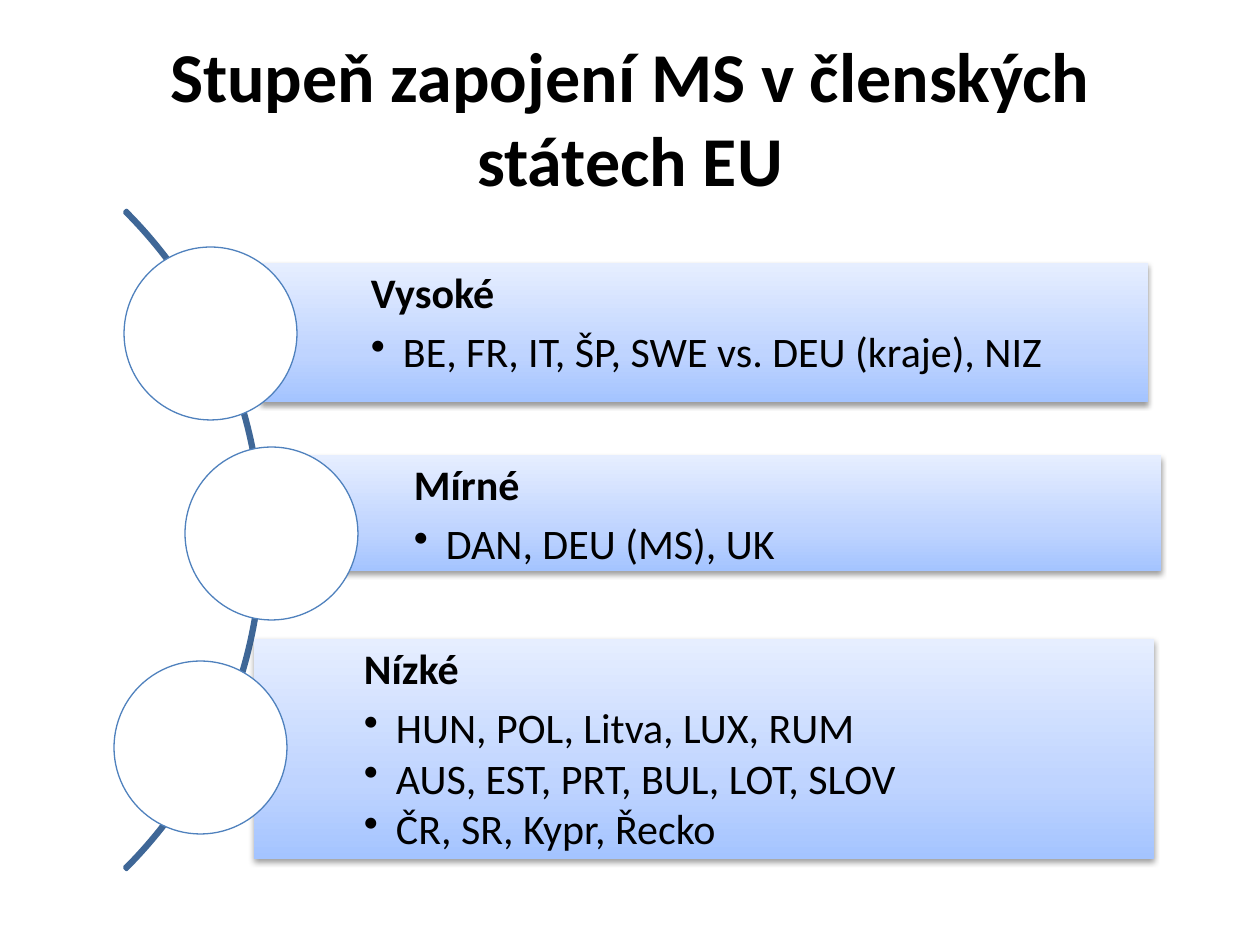
from pptx import Presentation
from pptx.dml.color import RGBColor
from pptx.enum.shapes import MSO_SHAPE
from pptx.enum.text import MSO_ANCHOR, PP_ALIGN
from pptx.oxml import parse_xml
from pptx.oxml.ns import nsdecls
from pptx.util import Pt

ARC, RECT, OVAL = MSO_SHAPE.BLOCK_ARC, MSO_SHAPE.RECTANGLE, MSO_SHAPE.OVAL
TOP, MID = MSO_ANCHOR.TOP, MSO_ANCHOR.MIDDLE
LEFT, CENTER = PP_ALIGN.LEFT, PP_ALIGN.CENTER

TITLE = "Stupeň zapojení MS v členských státech EU"
LEVELS = [
    ("Vysoké", ["BE, FR, IT, ŠP, SWE vs. DEU (kraje), NIZ"],
     (261, 263, 887, 139), (124, 247)),
    ("Mírné", ["DAN, DEU (MS), UK"],
     (304, 455, 857, 116), (185, 447)),
    ("Nízké", ["HUN, POL, Litva, LUX, RUM",
               "AUS, EST, PRT, BUL, LOT, SLOV",
               "ČR, SR, Kypr, Řecko"],
     (254, 639, 900, 220), (114, 661)),
]
STOPS = [(0, "A4C4FF"), (35, "BFD4FF"), (100, "E6EEFF")]
DISC = 173
PAD, INSET, HANG = 9, 110, 32
FONT = "Calibri"


def px(n):
    return round(n * 914400 / 126)


def color(code):
    return RGBColor.from_string(code)


def add(kind, left, top, width, height):
    shape = slide.shapes.add_shape(
        kind, px(left), px(top), px(width), px(height))
    shape.shadow.inherit = False
    return shape


def style(para, size, bold, align):
    para.alignment = align
    for run in para.runs:
        font = run.font
        font.name, font.size, font.bold = FONT, Pt(size), bold
        font.color.rgb = color("000000")


def outline(shape, code, width):
    shape.line.color.rgb = color(code)
    shape.line.width = Pt(width)


def shade(shape):
    shape.line.fill.background()
    props = shape._element.spPr
    stops = "".join(
        f'<a:gs pos="{pos * 1000}"><a:srgbClr val="{code}"/></a:gs>'
        for pos, code in STOPS)
    props.find("{*}ln").addprevious(parse_xml(
        f'<a:gradFill {nsdecls("a")} rotWithShape="1"><a:gsLst>{stops}</a:gsLst>'
        '<a:lin ang="16200000" scaled="0"/></a:gradFill>'))
    props.find("{*}effectLst").append(parse_xml(
        f'<a:outerShdw {nsdecls("a")} blurRad="40000" dist="20000" '
        'dir="5400000" rotWithShape="0"><a:srgbClr val="000000">'
        '<a:alpha val="38000"/></a:srgbClr></a:outerShdw>'))


def bullet(para):
    props = para._p.get_or_add_pPr()
    props.set("marL", str(px(HANG)))
    props.set("indent", str(-px(HANG)))
    props.append(parse_xml(f'<a:buChar {nsdecls("a")} char="•"/>'))


def fill_text(shape, head, items):
    frame = shape.text_frame
    frame.word_wrap = True
    frame.vertical_anchor = TOP
    frame.margin_left = px(INSET)
    frame.margin_top = frame.margin_right = frame.margin_bottom = px(PAD)
    frame.text = "\n".join([head, *items])
    for i, para in enumerate(frame.paragraphs):
        para.line_spacing = 0.9
        para.space_after = Pt(3 if i else 8)
        if i:
            bullet(para)
        style(para, 24, i == 0, LEFT)


deck = Presentation()
deck.slide_width, deck.slide_height = px(1260), px(945)
slide = deck.slides.add_slide(deck.slide_layouts[6])

title = slide.shapes.add_textbox(px(63), px(38), px(1134), px(157))
frame = title.text_frame
frame.word_wrap = True
frame.vertical_anchor = MID
frame.text = TITLE
style(frame.paragraphs[0], 40, True, CENTER)

arc = add(ARC, -669, 74, 932, 932)
for i, value in enumerate((189, 27, 0.003)):
    arc.adjustments[i] = value
arc.fill.background()
outline(arc, "3F6797", 2)

for head, items, area, spot in LEVELS:
    bar = add(RECT, *area)
    shade(bar)
    fill_text(bar, head, items)
    disc = add(OVAL, *spot, DISC, DISC)
    disc.fill.solid()
    disc.fill.fore_color.rgb = color("FFFFFF")
    outline(disc, "4F81BD", 0.75)

deck.save("out.pptx")
